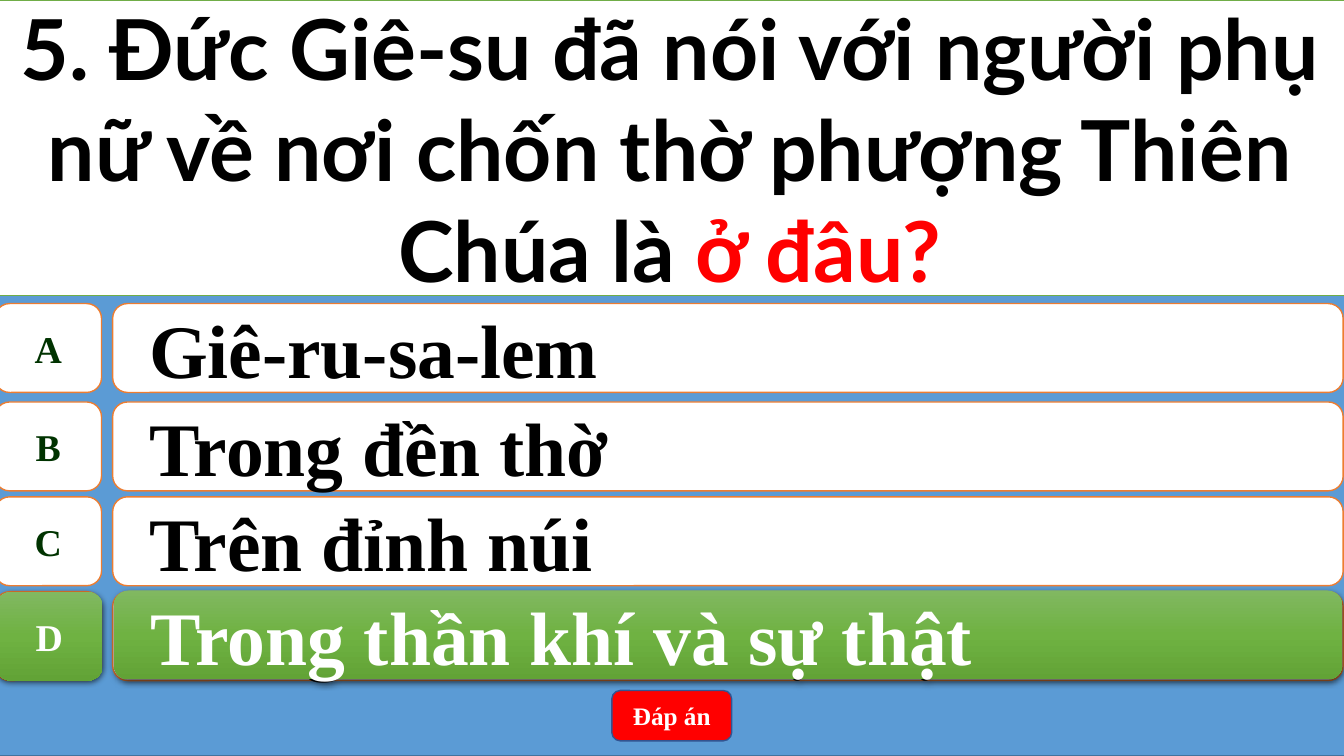
from dataclasses import dataclass

from lxml import etree
from pptx import Presentation
from pptx.dml.color import RGBColor
from pptx.enum.shapes import MSO_SHAPE
from pptx.enum.text import MSO_ANCHOR, MSO_AUTO_SIZE, PP_ALIGN
from pptx.oxml.ns import qn
from pptx.util import Cm, Pt

RECTANGLE = MSO_SHAPE.RECTANGLE
ROUNDED = MSO_SHAPE.ROUNDED_RECTANGLE
LETTER_SHAPE = MSO_SHAPE.FLOWCHART_ALTERNATE_PROCESS
CENTER, LEFT = PP_ALIGN.CENTER, PP_ALIGN.LEFT
MIDDLE = MSO_ANCHOR.MIDDLE
NO_AUTOFIT = MSO_AUTO_SIZE.NONE

COLORS = {
    "blue": "5B9BD5", "blue edge": "43739E", "button edge": "325491",
    "white": "FFFFFF", "black": "000000", "red": "FF0000",
    "orange": "ED7D31", "green": "70AD47", "dark green": "003300",
    "light top": "81B861", "mid green": "6FB242", "deep bottom": "62A336",
}
GREEN_STOPS = ((0, "light top"), (50, "mid green"), (100, "deep bottom"))
SERIF, SANS = "Times New Roman", "Lato"
ROW_HEIGHT = 2.24
EDGE_LEFT, FULL_WIDTH = -0.13, 34.01


@dataclass(frozen=True)
class Box:
    left: float
    top: float
    width: float
    height: float


@dataclass(frozen=True)
class Answer:
    letter: str
    text: str
    top: float


ANSWERS = (
    Answer("A", "Giê-ru-sa-lem", 7.65),
    Answer("B", "Trong đền thờ", 10.13),
    Answer("C", "Trên đỉnh núi", 12.52),
    Answer("D", "Trong thần khí và sự thật", 14.91),
)
CORRECT = ANSWERS[3]


def rgb(name: str) -> RGBColor:
    return RGBColor.from_string(COLORS[name])


def place(shape, box: Box) -> None:
    shape.left, shape.top = Cm(box.left), Cm(box.top)
    shape.width, shape.height = Cm(box.width), Cm(box.height)


def paint(shape, fill: str, line: str) -> None:
    shape.fill.solid()
    shape.fill.fore_color.rgb = rgb(fill)
    shape.line.color.rgb = rgb(line)
    shape.line.width = Pt(1)


def add_box(shapes, kind: MSO_SHAPE, box: Box, fill: str, line: str):
    shape = shapes.add_shape(kind, 0, 0, 0, 0)
    place(shape, box)
    shape.shadow.inherit = False
    paint(shape, fill, line)
    return shape


def write(shape, *pieces: tuple[str, str], size: float, font: str = SERIF,
          align: PP_ALIGN = CENTER, wrap: bool = True, hanging: bool = False) -> None:
    """Fill a shape with one bold paragraph of (text, colour) pieces."""
    frame = shape.text_frame
    frame.auto_size = NO_AUTOFIT
    frame.word_wrap = wrap
    frame.vertical_anchor = MIDDLE
    para = frame.paragraphs[0]
    para.alignment = align
    if hanging:
        para.level = 1
        properties = para._p.get_or_add_pPr()
        properties.set("marL", str(Cm(1.27)))
        properties.set("indent", str(Cm(-0.71)))
    for text, color in pieces:
        span = para.add_run()
        span.text = text
        span.font.name = font
        span.font.size = Pt(size)
        span.font.bold = True
        span.font.color.rgb = rgb(color)


def highlight(shape) -> None:
    """Give a shape the green gradient and drop shadow of the correct answer."""
    shape.line.fill.background()
    shape.fill.gradient()
    shape.fill.gradient_angle = 270
    properties = shape.element.spPr
    stops = properties.find(".//" + qn("a:gsLst"))
    for stop in list(stops):
        stops.remove(stop)
    for position, color in GREEN_STOPS:
        stop = etree.SubElement(stops, qn("a:gs"), pos=str(position * 1000))
        etree.SubElement(stop, qn("a:srgbClr"), val=COLORS[color])
    shadow = etree.SubElement(
        properties.find(qn("a:effectLst")), qn("a:outerShdw"),
        blurRad=str(Pt(4.5)), dist=str(Pt(1.5)), dir="5400000", rotWithShape="0")
    shade = etree.SubElement(shadow, qn("a:srgbClr"), val=COLORS["black"])
    etree.SubElement(shade, qn("a:alpha"), val="63000")


def add_answer(page, answer: Answer, revealed: bool = False) -> None:
    shapes = page.shapes.add_group_shape().shapes
    letter_box = Box(EDGE_LEFT, answer.top, 2.69, ROW_HEIGHT)
    text_box = Box(2.84, answer.top, 31.01, ROW_HEIGHT)
    letter_color, text_color = "dark green", "black"
    if revealed:
        letter_box = Box(-0.1, answer.top, 2.69, ROW_HEIGHT)
        text_box = Box(2.87, answer.top - 0.03, 30.96, ROW_HEIGHT)
        letter_color = text_color = "white"
    letter = add_box(shapes, LETTER_SHAPE, letter_box, "white", "orange")
    write(letter, (answer.letter, letter_color), size=27, wrap=False)
    bar = add_box(shapes, ROUNDED, text_box, "white", "orange")
    write(bar, (answer.text, text_color), size=54, align=LEFT, hanging=True)
    if revealed:
        highlight(letter)
        highlight(bar)


def add_question(page) -> None:
    title = page.shapes.title
    place(title, Box(EDGE_LEFT, 0, FULL_WIDTH, 7.44))
    paint(title, "white", "green")
    write(title,
          ("5. Đức Giê-su đã nói với người phụ nữ về nơi chốn thờ phượng Thiên Chúa là ",
           "black"),
          ("ở đâu?", "red"), size=60, font=SANS)
    title.element.getparent().append(title.element)


def main() -> None:
    deck = Presentation()
    deck.slide_width, deck.slide_height = Cm(33.87), Cm(19.05)
    page = deck.slides.add_slide(deck.slide_layouts[5])
    add_box(page.shapes, RECTANGLE, Box(EDGE_LEFT, 0, FULL_WIDTH, 19.05),
            "blue", "blue edge")
    for answer in ANSWERS:
        add_answer(page, answer)
    button = add_box(page.shapes, ROUNDED, Box(15.42, 17.4, 3.02, 1.27),
                     "red", "button edge")
    write(button, ("Đáp án", "white"), size=18)
    add_answer(page, CORRECT, revealed=True)
    add_question(page)
    deck.save("out.pptx")


if __name__ == "__main__":
    main()
